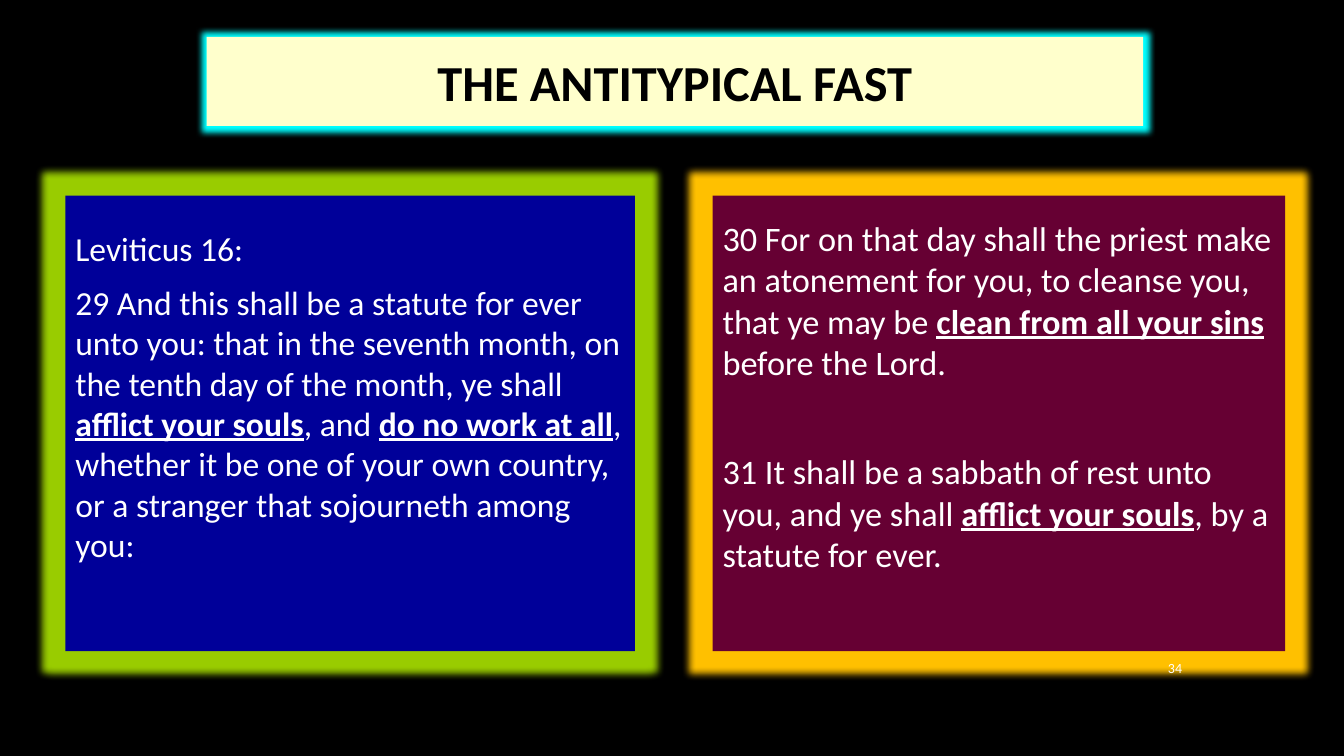
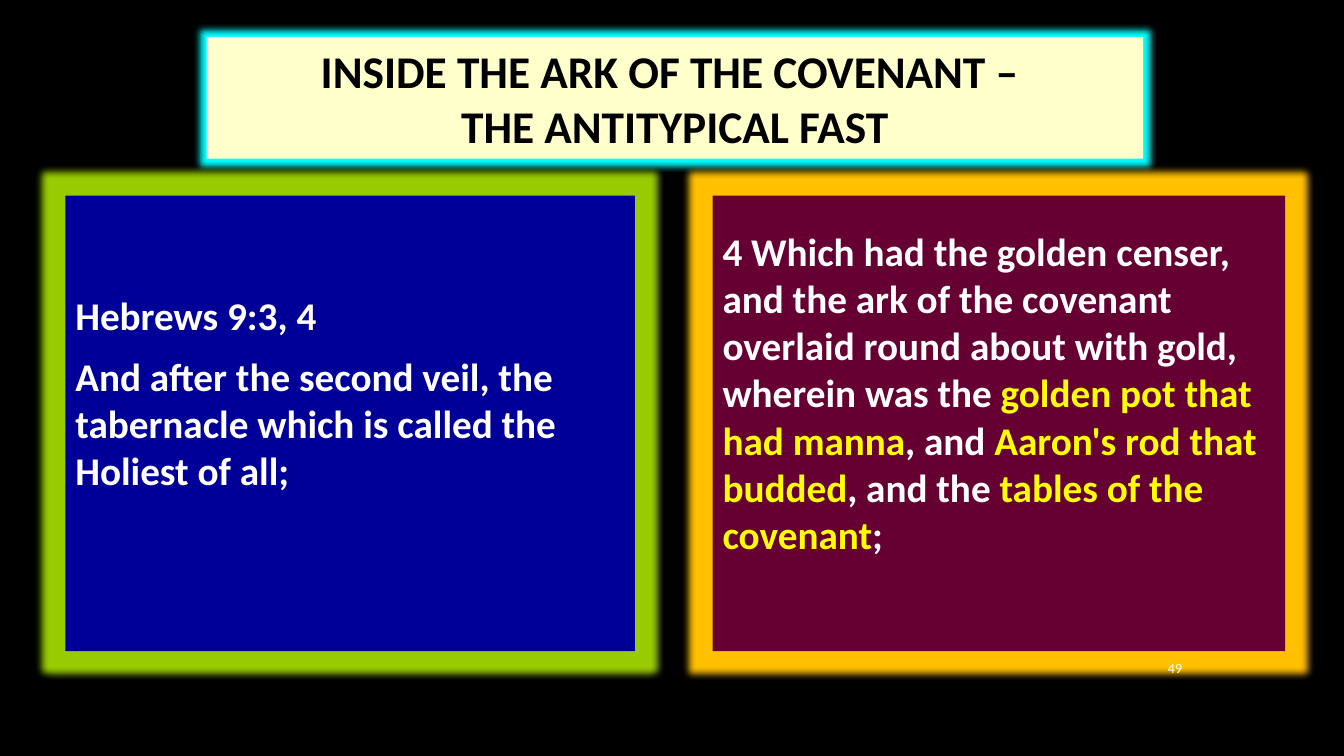
from lxml.etree import SubElement as Sub
from pptx import Presentation
from pptx.dml.color import RGBColor as RGB
from pptx.enum.shapes import MSO_SHAPE as Form
from pptx.enum.text import MSO_ANCHOR as Anchor, MSO_AUTO_SIZE as Auto, PP_ALIGN as Align
from pptx.oxml.ns import qn
from pptx.util import Cm, Pt

FONT = "Calibri"
BLACK, WHITE, GOLD = "000000", "FFFFFF", "FFFF00"
CREAM, CYAN = "FFFFCC", "00FFFF"
NAVY, LIME = "000099", "99CC00"
WINE, AMBER = "660033", "FFC000"
PLAIN, BOLD = {}, {"bold": True}
KEY = {"bold": True, "line": True}
MARK = {"bold": True, "tint": GOLD}


def color(code):
    """Turn a hex string into a colour."""
    return RGB.from_string(code)


def place(shape, left, top, width, height):
    """Set the position and size of a shape in centimetres."""
    shape.left, shape.top = Cm(left), Cm(top)
    shape.width, shape.height = Cm(width), Cm(height)


def paint(shape, fill, halo, radius):
    """Fill a shape and surround it with a glow."""
    shape.fill.solid()
    shape.fill.fore_color.rgb = color(fill)
    shape.line.fill.background()
    shape.shadow.inherit = False
    effects = shape._element.spPr.find(qn("a:effectLst"))
    glow = Sub(effects, qn("a:glow"), rad=str(Pt(radius)))
    Sub(glow, qn("a:srgbClr"), val=halo)


def setup(shape):
    """Prepare the text frame of a shape and return it."""
    frame = shape.text_frame
    frame.word_wrap = True
    frame.auto_size = Auto.NONE
    frame.vertical_anchor = Anchor.MIDDLE
    return frame


def write(para, text, size, tint=WHITE, bold=False, line=False):
    """Add one formatted run to a paragraph."""
    run = para.add_run()
    run.text = text
    font = run.font
    font.name, font.size = FONT, Pt(size)
    font.bold, font.underline = bold, line
    font.color.rgb = color(tint)


def head(slide, lines, size, height):
    """Format the title placeholder as a glowing banner."""
    title = slide.shapes.title
    place(title, 5.21, 0.93, 23.6, height)
    paint(title, CREAM, CYAN, 9)
    para = setup(title).paragraphs[0]
    para.alignment = Align.CENTER
    for index, text in enumerate(lines):
        if index:
            para.add_line_break()
        write(para, text, size, BLACK, True)


def panel(slide, left, width, fill, halo, size, paras, gap=10):
    """Add a glowing verse panel, with one spare line below its text."""
    box = slide.shapes.add_shape(Form.RECTANGLE, 0, 0, 0, 0)
    place(box, left, 4.93, width, 11.48)
    paint(box, fill, halo, 11)
    frame = setup(box)
    frame.margin_bottom = Pt(round(size * 1.2 + 14))
    for index, runs in enumerate(paras):
        para = frame.add_paragraph() if index else frame.paragraphs[0]
        para.alignment = Align.LEFT
        para.space_after = Pt(gap if index < len(paras) - 1 else 10)
        for text, style in runs:
            write(para, text, size, **style)


def left(slide, size, paras):
    """Add the blue panel."""
    panel(slide, 1.65, 14.35, NAVY, LIME, size, paras)


def right(slide, size, paras, gap=10):
    """Add the wine panel."""
    panel(slide, 17.96, 14.43, WINE, AMBER, size, paras, gap)


def number(slide, text):
    """Add the page number."""
    box = slide.shapes.add_textbox(0, 0, 0, 0)
    place(box, 28.52, 16.31, 1.52, 1.04)
    para = setup(box).paragraphs[0]
    para.alignment = Align.RIGHT
    write(para, text, 10)


def fast(slide):
    """Build the slide on the fast."""
    head(slide, ["THE ANTITYPICAL FAST"], 36, 2.24)
    left(slide, 24, [
        [("Leviticus 16:", PLAIN)],
        [("29 And this shall be a statute for ever unto you: that in the seventh "
          "month, on the tenth day of the month, ye shall ", PLAIN),
         ("afflict your souls", KEY), (", and ", PLAIN),
         ("do no work at all", KEY),
         (", whether it be one of your own country, or a stranger that "
          "sojourneth among you:", PLAIN)],
    ])
    right(slide, 24.5, [
        [("30 For on that day shall the priest make an atonement for you, to "
          "cleanse you, that ye may be ", PLAIN),
         ("clean from all your sins ", KEY), ("before the Lord.", PLAIN)],
        [("31 It shall be a sabbath of rest unto you, and ye shall ", PLAIN),
         ("afflict your souls", KEY), (", by a statute for ever.", PLAIN)],
    ], gap=49)
    number(slide, "34")


def ark(slide):
    """Build the slide on the ark."""
    head(slide, ["INSIDE THE ARK OF THE COVENANT – ", "THE ANTITYPICAL FAST"], 32.4, 3.07)
    left(slide, 28, [
        [("Hebrews 9:3, 4", BOLD)],
        [("And after the second veil, the tabernacle which is called the "
          "Holiest of all;", BOLD)],
    ])
    right(slide, 28, [
        [("4 Which had the golden censer, and the ark of the covenant overlaid "
          "round about with gold, wherein was the ", BOLD),
         ("golden pot that had manna", MARK), (", and ", BOLD),
         ("Aaron's rod that budded", MARK), (", and the ", BOLD),
         ("tables of the covenant", MARK), (";", BOLD)],
    ])
    number(slide, "49")


def main():
    """Build and save the deck."""
    deck = Presentation()
    deck.slide_width, deck.slide_height = Cm(33.87), Cm(19.05)
    back = deck.slide_master.background.fill
    back.solid()
    back.fore_color.rgb = color(BLACK)
    for build in (fast, ark):
        build(deck.slides.add_slide(deck.slide_layouts[5]))
    deck.save("out.pptx")


if __name__ == "__main__":
    main()
